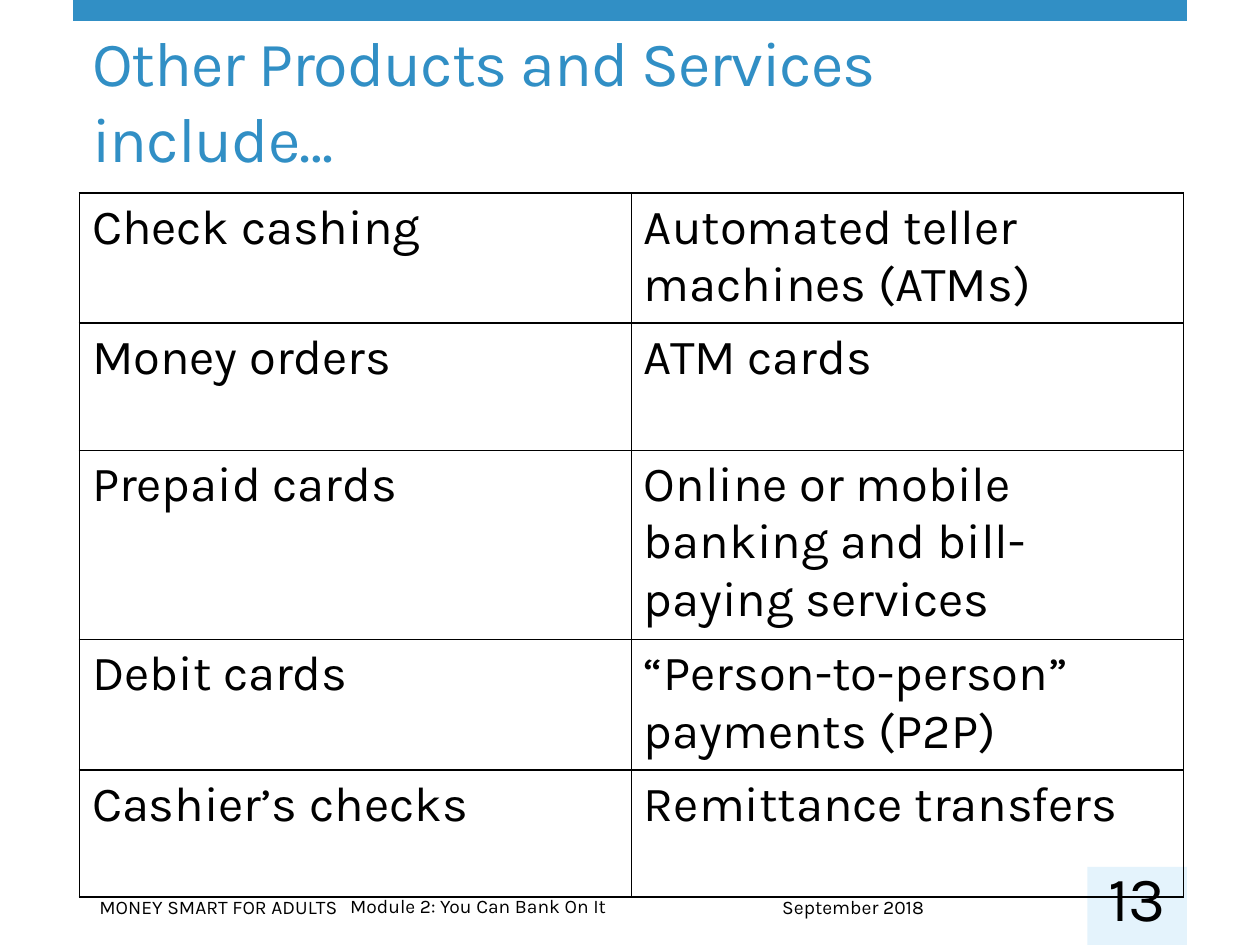
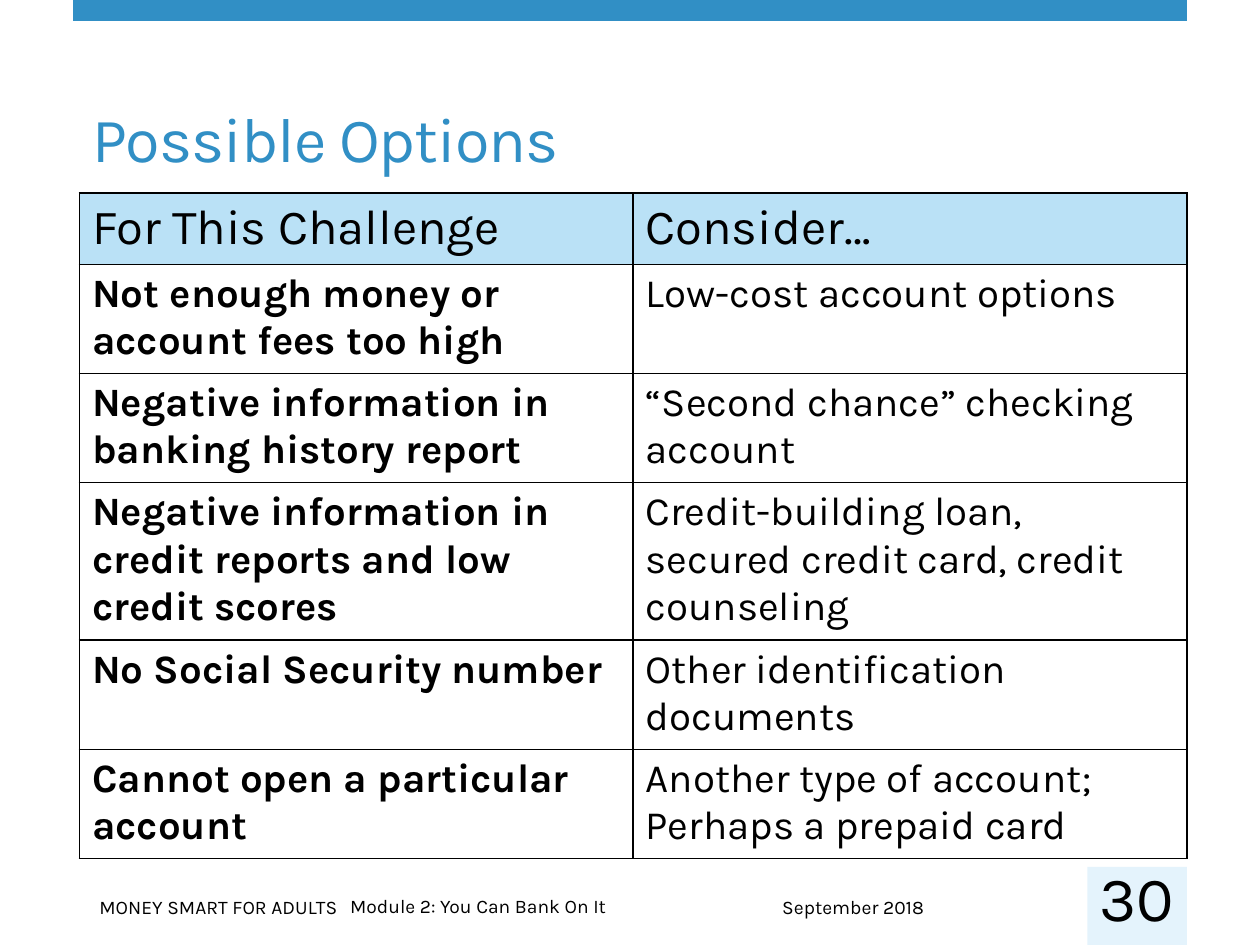
from lxml import etree
from pptx import Presentation
from pptx.dml.color import RGBColor
from pptx.enum import shapes, text
from pptx.oxml import ns
from pptx.util import Pt

FACE = "Karla"
BLUE = RGBColor(0x31, 0x8F, 0xC5)
PALE = RGBColor(0xE4, 0xF3, 0xFC)
SKY = RGBColor(0x76, 0xC5, 0xEF)
BLACK = RGBColor(0, 0, 0)

LEFT, RIGHT = 45.4, 678.2
BAND = 41.8
PAGE = 621.4
TOP = 110.2
ZERO = dict(margin_left=0, margin_top=0, margin_right=0, margin_bottom=0)
FOOT = [
    ("MONEY SMART FOR ADULTS", (49.7, 508.3, 150.5, 20.9), False),
    ("Module 2: You Can Bank On It", (193, 507.6, 407.5, 20.9), True),
    ("September 2018", (439.9, 508.3, 181.4, 20.9), True),
]

SERVICES = [
    ("Check cashing", "Automated teller machines (ATMs)"),
    ("Money orders", "ATM cards"),
    ("Prepaid cards", "Online or mobile banking and bill-paying services"),
    ("Debit cards", "“Person-to-person” payments (P2P)"),
    ("Cashier’s checks", "Remittance transfers"),
]
OPTIONS = [
    ("For This Challenge", "Consider…"),
    ("Not enough money or account fees too high", "Low-cost account options"),
    ("Negative information in banking history report",
     "“Second chance” checking account"),
    ("Negative information in credit reports and low credit scores",
     "Credit-building loan, secured credit card, credit counseling"),
    ("No Social Security number", "Other identification documents"),
    ("Cannot open a particular account",
     "Another type of account;\nPerhaps a prepaid card"),
]


def apply(item, form):
    for name, value in form.items():
        setattr(item, name, value)


def write(frame, words, size, color=BLACK, bold=False, align=text.PP_ALIGN.LEFT):
    frame.text = words
    for para in frame.paragraphs:
        para.alignment = align
        for run in para.runs:
            apply(run.font, dict(name=FACE, size=Pt(size), bold=bold))
            run.font.color.rgb = color


def block(slide, color, *place):
    shape = slide.shapes.add_shape(shapes.MSO_SHAPE.RECTANGLE, *map(Pt, place))
    shape.shadow.inherit = False
    shape.fill.solid()
    shape.fill.fore_color.rgb = color
    shape.line.fill.background()


def label(slide, words, place, size, form, **style):
    box = slide.shapes.add_textbox(*map(Pt, place))
    apply(box.text_frame, form)
    write(box.text_frame, words, size, **style)


def head(slide, words):
    title = slide.shapes.title
    apply(title, dict(left=Pt(LEFT), top=Pt(34.6), width=Pt(590.4), height=Pt(69.1)))
    apply(title.text_frame, dict(vertical_anchor=text.MSO_ANCHOR.BOTTOM,
                                 auto_size=text.MSO_AUTO_SIZE.NONE, word_wrap=True))
    write(title.text_frame, words, 36, BLUE)
    for run in title.text_frame.paragraphs[0].runs:
        run.font._element.set("spc", "-60")


def border(cell):
    props = cell._tc.get_or_add_tcPr()
    for spot, side in enumerate(("lnL", "lnR", "lnT", "lnB")):
        line = etree.Element(ns.qn("a:" + side), w=str(Pt(1)))
        fill = etree.SubElement(line, ns.qn("a:solidFill"))
        etree.SubElement(fill, ns.qn("a:srgbClr"), val=str(BLACK))
        props.insert(spot, line)


def tint(cell):
    cell.fill.solid()
    cell.fill.fore_color.rgb = SKY
    color = cell._tc.tcPr.find(".//" + ns.qn("a:srgbClr"))
    etree.SubElement(color, ns.qn("a:alpha"), val="50000")


def grid(slide, rows, highs, width, size, topped=False):
    place = (LEFT, TOP, width, sum(highs))
    table = slide.shapes.add_table(len(rows), 2, *map(Pt, place)).table
    apply(table, dict(first_row=topped, horz_banding=False))
    for col in table.columns:
        col.width = Pt(width / 2)
    for r, (row, high) in enumerate(zip(rows, highs)):
        table.rows[r].height = Pt(high)
        top = topped and r == 0
        for c, words in enumerate(row):
            cell = table.cell(r, c)
            if top:
                tint(cell)
            else:
                cell.fill.background()
            border(cell)
            write(cell.text_frame, words, 28 if top else size,
                  bold=topped and not top and c == 0)


def start(deck, title, page):
    slide = deck.slides.add_slide(deck.slide_layouts[5])
    block(slide, BLUE, BAND, 0, RIGHT - BAND, 12)
    block(slide, PALE, PAGE, 495.4, RIGHT - PAGE, 44.6)
    for words, place, wrap in FOOT:
        label(slide, words, place, 11, dict(word_wrap=wrap))
    head(slide, title)
    return slide


def number(slide, page):
    form = dict(ZERO, word_wrap=True, vertical_anchor=text.MSO_ANCHOR.MIDDLE)
    label(slide, str(page), (PAGE, 501.1, RIGHT - PAGE, 22.3), 36, form,
          align=text.PP_ALIGN.CENTER)


def main():
    deck = Presentation()
    apply(deck, dict(slide_width=Pt(720), slide_height=Pt(540)))
    sheets = [
        ("Other Products and Services include…", 13, SERVICES,
         (72.7, 72.7, 105.7, 72.7, 72.7), 630.8, 28, False),
        ("Possible Options", 30, OPTIONS,
         (40, 61, 61, 87.6, 61, 61), 632.8, 23, True),
    ]
    for title, page, *body in sheets:
        slide = start(deck, title, page)
        grid(slide, *body)
        number(slide, page)
    deck.save("out.pptx")


if __name__ == "__main__":
    main()
